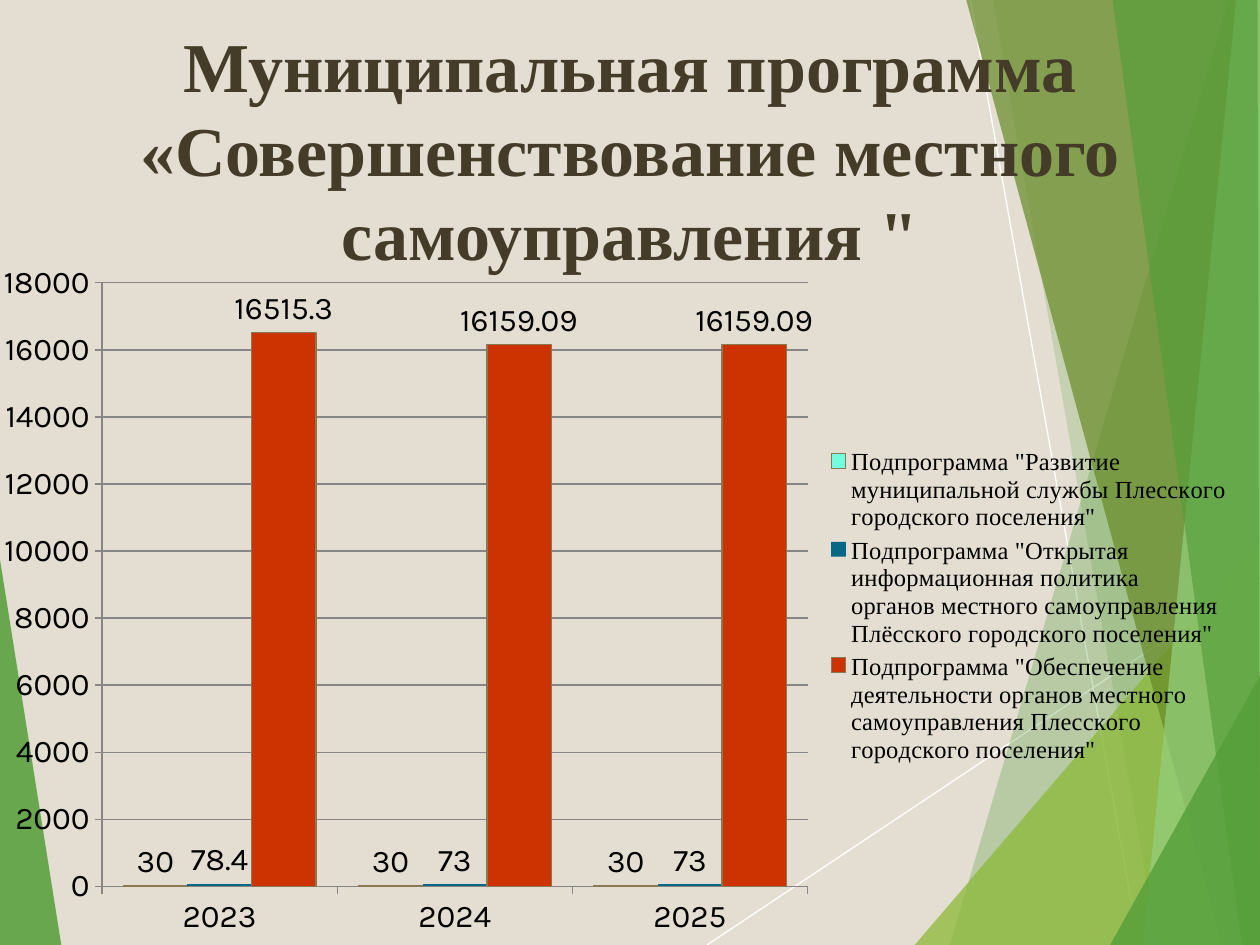
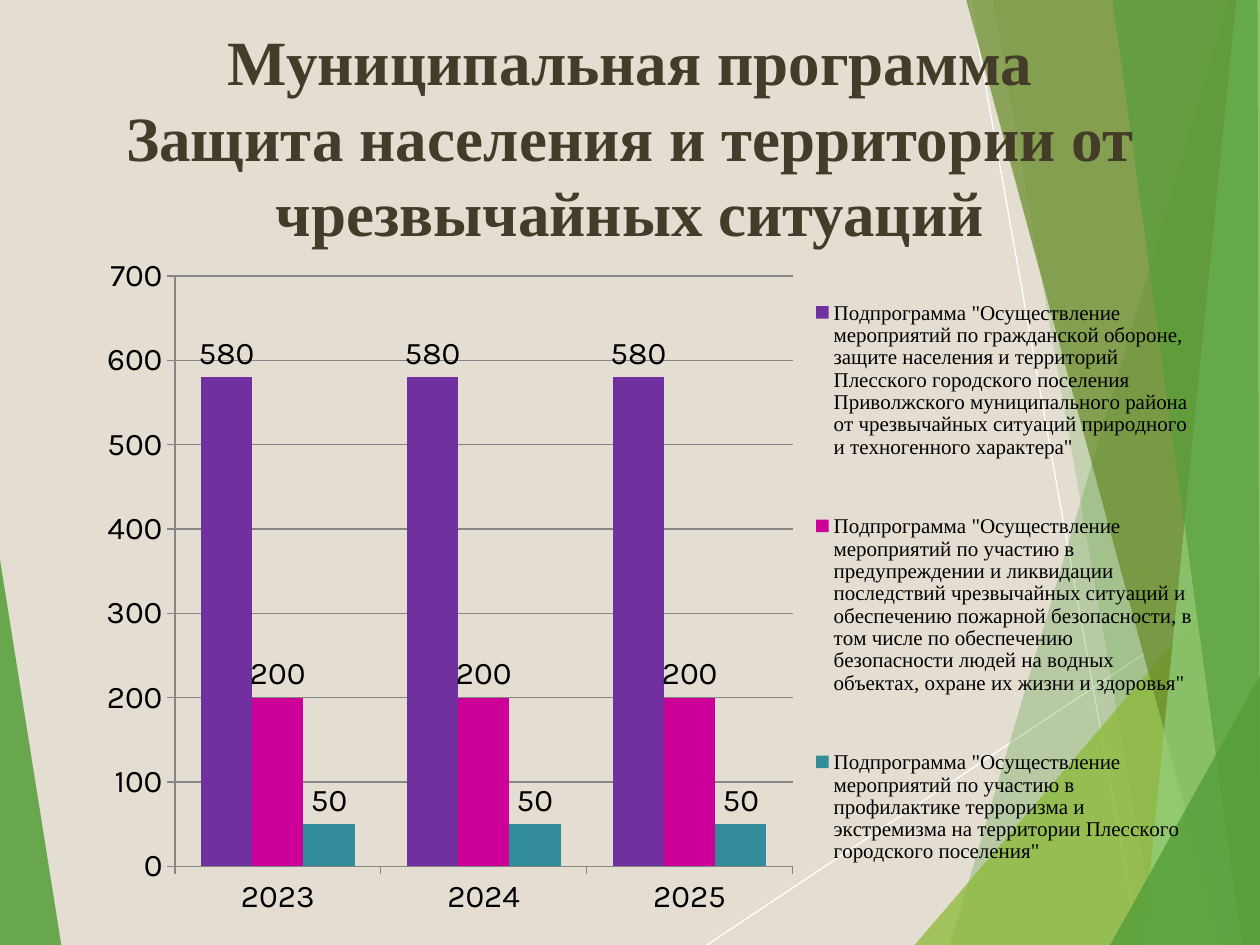
"""Build two slides on municipal programmes, each with a title and a column chart."""
from typing import NamedTuple

from lxml import etree
from pptx import Presentation
from pptx import util as u
from pptx.chart.chart import Chart
from pptx.chart.data import CategoryChartData
from pptx.dml.color import RGBColor
from pptx.enum import chart as ch
from pptx.enum import text
from pptx.enum.shapes import MSO_CONNECTOR
from pptx.oxml.ns import qn
from pptx.slide import Slide, SlideLayout

BACKGROUND, TITLE_COLOUR, WHITE, BLACK = "E3DED1", "443C29", "FFFFFF", "000000"
GREEN, LIME, OLIVE, PALE = "549E39", "8AB833", "678A26", "93D07D"
GRID, BAR_EDGE = "868686", "887952"
SERIF, SANS = "Times New Roman", "Karla"
WIDTH, BOTTOM, EDGE = 25.4, 19.05, 25.42
HAIRLINE, THIN = u.Pt(0), u.Pt(0.75)
YEARS = ["2023", "2024", "2025"]


class Ray(NamedTuple):
    start: tuple[float, float]
    end: tuple[float, float]


class Facet(NamedTuple):
    corners: list[tuple[float, float]]
    colour: str
    opacity: int


class Subprogramme(NamedTuple):
    name: str
    amounts: list[float]
    colour: str
    edge: str | None = None


class Box(NamedTuple):
    left: float
    top: float
    width: float
    height: float


class Programme(NamedTuple):
    title_lines: list[str]
    title_size: int
    title_height: float
    chart_box: Box
    plot_box: Box
    legend_box: Box
    legend_size: int
    gap: int
    subprogrammes: list[Subprogramme]


RAYS = [Ray((14.25, BOTTOM), (EDGE, 11.61)), Ray((19.56, 0), (22.96, BOTTOM))]

FACETS = [
    Facet([(-0.02, 11.15), (1.24, 19.07), (-0.02, BOTTOM)], GREEN, 85),
    Facet([(24.77, 0), (19.15, BOTTOM), (EDGE, BOTTOM), (EDGE, 0)], GREEN, 30),
    Facet([(20.02, 0), (23.34, BOTTOM), (EDGE, BOTTOM), (EDGE, 0)], GREEN, 20),
    Facet([(18.44, BOTTOM), (EDGE, 10.9), (EDGE, BOTTOM)], LIME, 72),
    Facet([(19.48, 0), (24.64, BOTTOM), (EDGE, BOTTOM), (EDGE, 0)], OLIVE, 70),
    Facet([(24.92, 0), (23.04, BOTTOM), (EDGE, BOTTOM), (EDGE, 0)], PALE, 70),
    Facet([(22.43, 0), (25.04, BOTTOM), (WIDTH, BOTTOM), (25.35, 0)], GREEN, 65),
    Facet([(22.38, BOTTOM), (EDGE, 13.59), (EDGE, BOTTOM)], GREEN, 80),
]

PROGRAMMES = [
    Programme(
        ["Муниципальная программа", "«Совершенствование местного самоуправления \""],
        40, 5.21, Box(0, 5.33, 25.4, 13.72),
        Box(0.081, 0.027, 0.56, 0.887), Box(0.659, 0.262, 0.315, 0.48), 14, 66,
        [
            Subprogramme("Подпрограмма \"Развитие муниципальной службы Плесского "
                         "городского поселения\"", [30, 30, 30], "72FDDF", BAR_EDGE),
            Subprogramme("Подпрограмма \"Открытая информационная политика органов местного "
                         "самоуправления Плёсского городского поселения\"",
                         [78.4, 73, 73], "076785"),
            Subprogramme("Подпрограмма \"Обеспечение деятельности органов местного "
                         "самоуправления Плесского городского поселения\"",
                         [16515.3, 16159.09, 16159.09], "CC3300", BAR_EDGE),
        ],
    ),
    Programme(
        ["Муниципальная программа", "Защита населения и территории от чрезвычайных ситуаций"],
        36, 5.03, Box(1.7, 4.93, 22.81, 13.79),
        Box(0.08, 0.046, 0.546, 0.863), Box(0.645, 0, 0.336, 0.988), 12, 102,
        [
            Subprogramme("Подпрограмма \"Осуществление мероприятий по гражданской обороне, "
                         "защите населения и территорий Плесского городского поселения "
                         "Приволжского муниципального района от чрезвычайных ситуаций "
                         "природного и техногенного характера\"", [580] * 3, "7030A0"),
            Subprogramme("Подпрограмма \"Осуществление мероприятий по участию в предупреждении "
                         "и ликвидации последствий чрезвычайных ситуаций и обеспечению пожарной "
                         "безопасности, в том числе по обеспечению безопасности людей на водных "
                         "объектах, охране их жизни и здоровья\"", [200] * 3, "CC0099"),
            Subprogramme("Подпрограмма \"Осуществление мероприятий по участию в профилактике "
                         "терроризма и экстремизма на территории Плесского городского "
                         "поселения\"", [50] * 3, "328C99"),
        ],
    ),
]


def rgb(colour: str) -> RGBColor:
    """Turn a hex string into a colour."""
    return RGBColor.from_string(colour)


def paint_fill(fill, colour: str) -> None:
    """Give a fill one solid colour."""
    fill.solid()
    fill.fore_color.rgb = rgb(colour)


def paint_line(line, colour: str, width: u.Length) -> None:
    """Give a line its colour and width."""
    paint_fill(line.fill, colour)
    line.width = width


def style_font(font, size: int, face: str, colour: str, bold: bool = False) -> None:
    """Set size, face, colour and weight of a font."""
    font.size, font.name, font.bold = u.Pt(size), face, bold
    font.color.rgb = rgb(colour)


def draw_ray(slide: Slide, ray: Ray):
    """Draw a thin white line."""
    line = slide.shapes.add_connector(
        MSO_CONNECTOR.STRAIGHT, *(u.Cm(value) for value in ray.start + ray.end))
    paint_line(line.line, WHITE, THIN)
    etree.SubElement(line.element.spPr, qn("a:effectLst"))
    return line


def draw_facet(slide: Slide, facet: Facet):
    """Draw a translucent polygon."""
    first, *rest = [(u.Cm(x), u.Cm(y)) for x, y in facet.corners]
    builder = slide.shapes.build_freeform(*first)
    builder.add_line_segments(rest, close=True)
    polygon = builder.convert_to_shape()
    paint_fill(polygon.fill, facet.colour)
    polygon.line.fill.background()
    polygon.shadow.inherit = False
    tint = polygon.element.spPr.find(f"{qn('a:solidFill')}/{qn('a:srgbClr')}")
    etree.SubElement(tint, qn("a:alpha"), val=str(facet.opacity * 1000))
    return polygon


def decorate_layout(layout: SlideLayout, slide: Slide) -> None:
    """Draw the shared backdrop on a slide and move it to the layout."""
    paint_fill(layout.background.fill, BACKGROUND)
    backdrop = [draw_ray(slide, ray) for ray in RAYS]
    backdrop += [draw_facet(slide, facet) for facet in FACETS]
    for part in backdrop:
        layout.shapes.element.append(part.element)


def write_title(slide: Slide, programme: Programme) -> None:
    """Place the title and write its lines."""
    title = slide.shapes.title
    title.left, title.top = u.Cm(0.5), u.Cm(0.33)
    title.width, title.height = u.Cm(24.4), u.Cm(programme.title_height)
    frame = title.text_frame
    frame.word_wrap = True
    frame.auto_size = text.MSO_AUTO_SIZE.NONE
    frame.vertical_anchor = text.MSO_ANCHOR.TOP
    paragraph = frame.paragraphs[0]
    paragraph.alignment = text.PP_ALIGN.CENTER
    for number, line in enumerate(programme.title_lines):
        if number:
            paragraph.add_line_break()
        run = paragraph.add_run()
        run.text = line
        style_font(run.font, programme.title_size, SERIF, TITLE_COLOUR, bold=True)


def manual_layout(box: Box, inner: bool = False):
    """Make a chart layout element from fractions of the chart area."""
    layout = etree.Element(qn("c:layout"))
    manual = etree.SubElement(layout, qn("c:manualLayout"))
    settings = [("layoutTarget", "inner")] if inner else []
    settings += [("xMode", "edge"), ("yMode", "edge")]
    settings += zip("xywh", map(str, box))
    for tag, value in settings:
        etree.SubElement(manual, qn(f"c:{tag}"), val=value)
    return layout


def place_parts(chart: Chart, programme: Programme) -> None:
    """Fix the places of the plot and the legend."""
    plot_area = chart.element.find(f".//{qn('c:plotArea')}")
    legend = chart.element.find(f".//{qn('c:legend')}")
    for parent in (plot_area, legend):
        for old in parent.findall(qn("c:layout")):
            parent.remove(old)
    plot_area.insert(0, manual_layout(programme.plot_box, inner=True))
    legend.find(qn("c:legendPos")).addnext(manual_layout(programme.legend_box))


def draw_chart(slide: Slide, programme: Programme) -> None:
    """Draw the yearly amounts of the subprogrammes."""
    data = CategoryChartData()
    data.categories = YEARS
    for part in programme.subprogrammes:
        data.add_series(part.name, part.amounts)
    chart = slide.shapes.add_chart(
        ch.XL_CHART_TYPE.COLUMN_CLUSTERED,
        *(u.Cm(value) for value in programme.chart_box), data).chart
    chart.has_title = False
    style_font(chart.font, 18, SANS, BLACK)

    chart.has_legend = True
    chart.legend.position = ch.XL_LEGEND_POSITION.RIGHT
    chart.legend.include_in_layout = False
    style_font(chart.legend.font, programme.legend_size, SERIF, BLACK)

    for axis in (chart.category_axis, chart.value_axis):
        axis.major_tick_mark = ch.XL_TICK_MARK.OUTSIDE
        axis.minor_tick_mark = ch.XL_TICK_MARK.NONE
        paint_line(axis.format.line, GRID, HAIRLINE)
    chart.value_axis.has_major_gridlines = True
    paint_line(chart.value_axis.major_gridlines.format.line, GRID, HAIRLINE)

    plot = chart.plots[0]
    plot.gap_width, plot.overlap, plot.vary_by_categories = programme.gap, 0, False
    for series, part in zip(plot.series, programme.subprogrammes):
        series.invert_if_negative = False
        paint_fill(series.format.fill, part.colour)
        if part.edge:
            paint_line(series.format.line, part.edge, THIN)
        else:
            series.format.line.fill.background()
        labels = series.data_labels
        labels.show_value = True
        labels.position = ch.XL_LABEL_POSITION.OUTSIDE_END
        style_font(labels.font, 18, SANS, BLACK)
    place_parts(chart, programme)


def main() -> None:
    """Build and save the presentation."""
    deck = Presentation()
    deck.slide_width, deck.slide_height = u.Cm(WIDTH), u.Cm(BOTTOM)
    title_only = deck.slide_layouts[5]
    slides = [deck.slides.add_slide(title_only) for _ in PROGRAMMES]
    decorate_layout(title_only, slides[0])
    for slide, programme in zip(slides, PROGRAMMES):
        write_title(slide, programme)
        draw_chart(slide, programme)
    deck.save("out.pptx")


if __name__ == "__main__":
    main()
